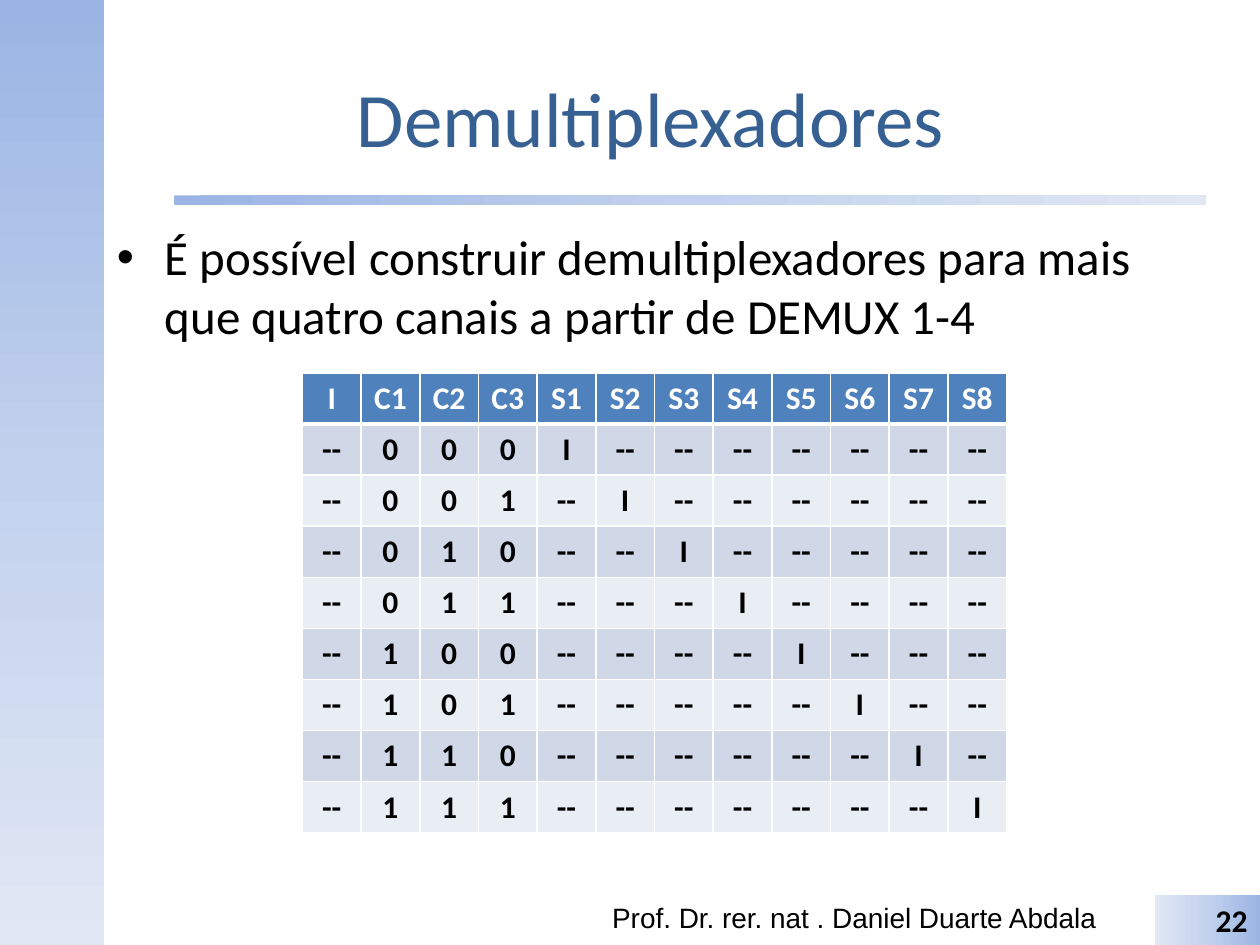
import copy
from dataclasses import dataclass

import lxml.etree
import pptx
import pptx.dml.color
import pptx.enum.shapes
import pptx.enum.text
import pptx.oxml.ns
import pptx.util

Inches = pptx.util.Inches
Pt = pptx.util.Pt
Align = pptx.enum.text.PP_ALIGN
Anchor = pptx.enum.text.MSO_ANCHOR
Preset = pptx.enum.shapes.MSO_SHAPE
qn = pptx.oxml.ns.qn

GRADIENT = ((0, "9AB5E4"), (0.5, "C2D1ED"), (1, "E1E8F5"))
BLACK, WHITE = "000000", "FFFFFF"
HEADER_FILL, BAND_FILLS = "4F81BD", ("D0D8E8", "E9EDF4")
CONTROL_COUNT = 3
OUTPUT_COUNT = 2 ** CONTROL_COUNT


@dataclass
class Box:
    left: float
    top: float
    width: float
    height: float

    def lengths(self) -> list:
        return [Inches(v) for v in (self.left, self.top, self.width, self.height)]


@dataclass
class TextStyle:
    size: float
    color: str = BLACK
    font: str = "Calibri"
    bold: bool = False
    align: Align = Align.LEFT


@dataclass
class GradientBar:
    box: Box
    preset: Preset
    angle: float  # counter-clockwise degrees


@dataclass
class TextBlock:
    box: Box
    text: str
    style: TextStyle
    anchor: Anchor = Anchor.TOP


SIDE_BAND = GradientBar(Box(0, 0, 0.83, 7.5), Preset.RECTANGLE, 270)
TITLE_RULE = GradientBar(Box(1.38, 1.55, 8.19, 0.08), Preset.ROUNDED_RECTANGLE, 0)
NUMBER_BAR = GradientBar(Box(9.17, 7.1, 0.83, 0.4), Preset.RECTANGLE, 180)

TITLE = TextBlock(Box(0.83, 0.3, 8.67, 1.25), "Demultiplexadores",
                  TextStyle(44, "376092", align=Align.CENTER), Anchor.MIDDLE)
BODY = TextBlock(Box(0.83, 1.75, 8.67, 4.95),
                 "É possível construir demultiplexadores para mais "
                 "que quatro canais a partir de DEMUX 1-4", TextStyle(28))
AUTHOR = TextBlock(Box(4.76, 7.1, 4.19, 0.4),
                   "Prof. Dr. rer. nat . Daniel Duarte Abdala",
                   TextStyle(16, font="Arial"))
NUMBER_STYLE = TextStyle(18, bold=True, align=Align.RIGHT)
TABLE_BOX = Box(2.4, 2.96, 5.59, 3.65)


def rgb(color: str) -> pptx.dml.color.RGBColor:
    return pptx.dml.color.RGBColor.from_string(color)


def set_attributes(target, values: dict) -> None:
    for name, value in values.items():
        setattr(target, name, value)


def write_text(frame, text: str, style: TextStyle):
    paragraph = frame.paragraphs[0]
    paragraph.alignment = style.align
    run = paragraph.add_run()
    run.text = text
    set_attributes(run.font, {"size": Pt(style.size), "name": style.font,
                              "bold": style.bold})
    run.font.color.rgb = rgb(style.color)
    return paragraph


def add_gradient_bar(slide, bar: GradientBar):
    shape = slide.shapes.add_shape(bar.preset, *bar.box.lengths())
    shape.shadow.inherit = False
    shape.line.fill.background()
    shape.fill.gradient()
    stop_list = shape.element.spPr.find(".//" + qn("a:gsLst"))
    stop_list.append(copy.deepcopy(stop_list[-1]))
    for stop, (position, color) in zip(shape.fill.gradient_stops, GRADIENT):
        stop.position = position
        stop.color.rgb = rgb(color)
    shape.fill.gradient_angle = bar.angle
    return shape


def add_text(slide, block: TextBlock):
    frame = slide.shapes.add_textbox(*block.box.lengths()).text_frame
    set_attributes(frame, {"word_wrap": True, "vertical_anchor": block.anchor})
    return write_text(frame, block.text, block.style)


def add_bullet(paragraph, indent: float) -> None:
    properties = paragraph._p.get_or_add_pPr()
    properties.set("marL", str(Inches(indent)))
    properties.set("indent", str(-Inches(indent)))
    font = lxml.etree.SubElement(properties, qn("a:buFont"))
    font.set("typeface", "Arial")
    lxml.etree.SubElement(properties, qn("a:buChar")).set("char", "•")


def set_borders(cell, widths: dict) -> None:
    properties = cell._tc.get_or_add_tcPr()
    for index, (side, width) in enumerate(widths.items()):
        line = lxml.etree.Element(qn("a:" + side), w=str(Pt(width)))
        fill = lxml.etree.SubElement(line, qn("a:solidFill"))
        lxml.etree.SubElement(fill, qn("a:srgbClr")).set("val", WHITE)
        properties.insert(index, line)


def truth_table() -> list:
    header = ["I"] + [f"C{i + 1}" for i in range(CONTROL_COUNT)]
    rows = [header + [f"S{i + 1}" for i in range(OUTPUT_COUNT)]]
    for selected in range(OUTPUT_COUNT):
        controls = list(f"{selected:0{CONTROL_COUNT}b}")
        outputs = ["I" if i == selected else "--" for i in range(OUTPUT_COUNT)]
        rows.append(["--"] + controls + outputs)
    return rows


def add_truth_table(slide, box: Box) -> None:
    rows = truth_table()
    table = slide.shapes.add_table(len(rows), len(rows[0]), *box.lengths()).table
    for column in table.columns:
        column.width = Inches(box.width / len(rows[0]))
    for row_index, values in enumerate(rows):
        is_header = row_index == 0
        fill = HEADER_FILL if is_header else BAND_FILLS[(row_index - 1) % 2]
        style = TextStyle(18, WHITE if is_header else BLACK, bold=True,
                          align=Align.CENTER)
        borders = {"lnL": 1, "lnR": 1, "lnT": 3 if row_index == 1 else 1,
                   "lnB": 3 if is_header else 1}
        for column_index, value in enumerate(values):
            cell = table.cell(row_index, column_index)
            set_attributes(cell, {"margin_left": Inches(0.05),
                                  "margin_right": Inches(0.05)})
            cell.fill.solid()
            cell.fill.fore_color.rgb = rgb(fill)
            set_borders(cell, borders)
            write_text(cell.text_frame, value, style)


def main() -> None:
    presentation = pptx.Presentation()
    set_attributes(presentation, {"slide_width": Inches(10),
                                  "slide_height": Inches(7.5)})
    slide = presentation.slides.add_slide(presentation.slide_layouts[6])

    # Background bands
    add_gradient_bar(slide, SIDE_BAND)
    add_gradient_bar(slide, TITLE_RULE)

    # Title and bullet
    add_text(slide, TITLE)
    bullet = add_text(slide, BODY)
    bullet.space_before = Pt(5.6)
    add_bullet(bullet, 0.38)

    # Footer
    add_text(slide, AUTHOR)
    number_bar = add_gradient_bar(slide, NUMBER_BAR)
    write_text(number_bar.text_frame, "22", NUMBER_STYLE)

    # Truth table of the 1-8 demultiplexer
    add_truth_table(slide, TABLE_BOX)

    presentation.save("out.pptx")


if __name__ == "__main__":
    main()
